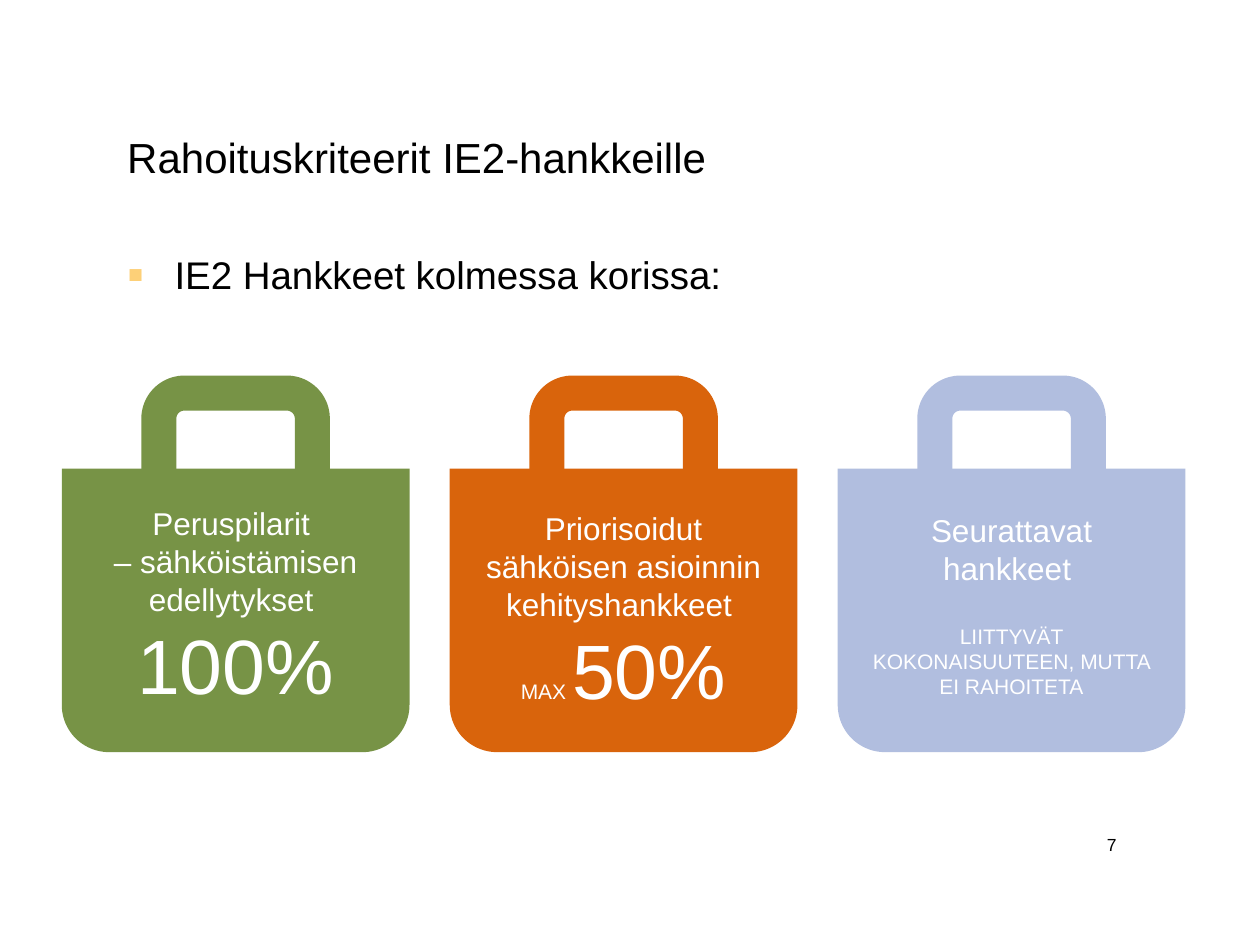
from lxml import etree
from pptx import Presentation
from pptx.dml.color import RGBColor
from pptx.enum.shapes import MSO_SHAPE
from pptx.enum.text import MSO_ANCHOR, MSO_AUTO_SIZE, PP_ALIGN
from pptx.oxml.ns import qn
from pptx.util import Pt

BAG = MSO_SHAPE.ROUND_2_SAME_RECTANGLE
TOP, MIDDLE = MSO_ANCHOR.TOP, MSO_ANCHOR.MIDDLE
LEFT, CENTER, RIGHT = PP_ALIGN.LEFT, PP_ALIGN.CENTER, PP_ALIGN.RIGHT
FIXED, GROW = MSO_AUTO_SIZE.NONE, MSO_AUTO_SIZE.SHAPE_TO_FIT_TEXT

BLACK = RGBColor(0x00, 0x00, 0x00)
WHITE = RGBColor(0xFF, 0xFF, 0xFF)
GREEN = RGBColor(0x77, 0x93, 0x46)
ORANGE = RGBColor(0xD9, 0x64, 0x0C)
LAVENDER = RGBColor(0xB1, 0xBE, 0xDF)
BULLET = RGBColor(0xFD, 0xD0, 0x78)

# Bag geometry in points
BAG_LEFT, BAG_PITCH = 35.3, 221.7
BODY_TOP, BODY_W, BODY_H = 267.8, 198.7, 162
HANDLE_TOP, HANDLE_W, HANDLE_H, HANDLE_LINE = 224.6, 87.8, 126, 20
LABEL_W = 180


class Deck:
    font = "Arial"

    def __init__(self, prs):
        self.s = prs.slides.add_slide(prs.slide_layouts[1])

    def place(self, sp, x, y, w, h):
        sp.left, sp.top, sp.width, sp.height = Pt(x), Pt(y), Pt(w), Pt(h)

    def add_runs(self, p, runs, color, align):
        p.alignment = align
        for text, size in runs:
            r = p.add_run()
            r.text = text
            r.font.name, r.font.size = self.font, Pt(size)
            r.font.color.rgb = color

    def placeholder(self, sp, box, text, size):
        self.place(sp, *box)
        tf = sp.text_frame
        tf.auto_size, tf.vertical_anchor = FIXED, TOP
        p = tf.paragraphs[0]
        p.space_before = Pt(0)
        self.add_runs(p, [(text, size)], BLACK, LEFT)
        return p

    def title(self, box, text, size):
        self.placeholder(self.s.shapes.title, box, text, size)

    def bullet(self, box, text, size):
        p = self.placeholder(self.s.placeholders[1], box, text, size)
        pPr = p._p.get_or_add_pPr()
        pPr.set("marL", str(Pt(27)))
        pPr.set("indent", str(-Pt(27)))
        clr = etree.SubElement(pPr, qn("a:buClr"))
        etree.SubElement(clr, qn("a:srgbClr"), val=str(BULLET))
        etree.SubElement(pPr, qn("a:buSzPct"), val="125000")
        etree.SubElement(pPr, qn("a:buFont"), typeface=self.font)
        etree.SubElement(pPr, qn("a:buChar"), char="▪")

    def text(self, box, paragraphs, color, align, anchor=TOP, fit=GROW):
        """Each paragraph is (space before, runs)."""
        sp = self.s.shapes.add_textbox(*map(Pt, box))
        tf = sp.text_frame
        tf.word_wrap, tf.auto_size, tf.vertical_anchor = True, fit, anchor
        for i, (space, runs) in enumerate(paragraphs):
            p = tf.add_paragraph() if i else tf.paragraphs[0]
            if space:
                p.space_before = Pt(space)
            self.add_runs(p, runs, color, align)

    def bag(self, x, color):
        shapes = self.s.shapes.add_group_shape().shapes
        # Filled body, rounded at the bottom
        sp = shapes.add_shape(BAG, Pt(x), Pt(BODY_TOP), Pt(BODY_W), Pt(BODY_H))
        sp.rotation = 180
        sp.shadow.inherit = False
        sp.fill.solid()
        sp.fill.fore_color.rgb = color
        sp.line.fill.background()
        # Outlined handle, centred on the body
        sp = shapes.add_shape(BAG, Pt(x + (BODY_W - HANDLE_W) / 2), Pt(HANDLE_TOP),
                              Pt(HANDLE_W), Pt(HANDLE_H))
        sp.shadow.inherit = False
        sp.fill.background()
        sp.line.color.rgb = color
        sp.line.width = Pt(HANDLE_LINE)


def main():
    prs = Presentation()
    prs.slide_width, prs.slide_height = Pt(720), Pt(540)
    deck = Deck(prs)

    # Title, list and page number
    deck.title((65.5, 71.3, 612, 50.4), "Rahoituskriteerit IE2-hankkeille", 24)
    deck.bullet((65.5, 139.7, 612.7, 310.3), "IE2 Hankkeet kolmessa korissa:", 22)
    deck.text((613.4, 468, 31.7, 28.8), [(0, [("7", 10)])], BLACK, RIGHT, MIDDLE, FIXED)

    # Three bags: colour, label top, label height, paragraphs
    bags = [
        (GREEN, 284.4, 126, [
            (0, [("Peruspilarit ", 18)]),
            (0, [("– sähköistämisen edellytykset ", 18)]),
            (0, [("100%", 44)])]),
        (ORANGE, 287.3, 126, [
            (0, [("Priorisoidut sähköisen asioinnin kehityshankkeet ", 18)]),
            (0, [("MAX ", 12), ("50%", 44)])]),
        (LAVENDER, 288.7, 116.6, [
            (0, [("Seurattavat hankkeet ", 18)]),
            (20.7, [("LIITTYVÄT KOKONAISUUTEEN, MUTTA EI RAHOITETA", 12)])]),
    ]
    for i, (color, top, height, paragraphs) in enumerate(bags):
        x = BAG_LEFT + i * BAG_PITCH
        deck.bag(x, color)
        deck.text((x + (BODY_W - LABEL_W) / 2, top, LABEL_W, height),
                  paragraphs, WHITE, CENTER)

    prs.save("out.pptx")


if __name__ == "__main__":
    main()
